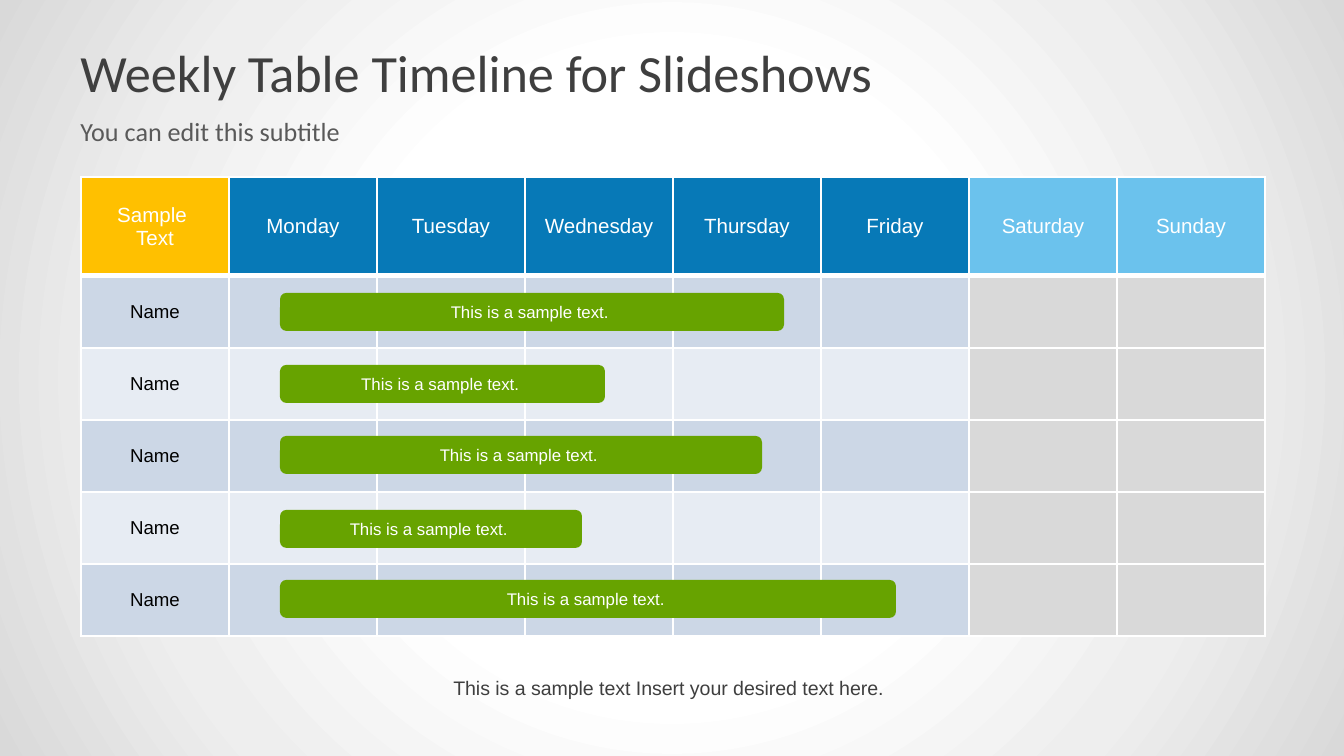
from pptx import Presentation
from pptx.dml.color import RGBColor
from pptx.enum.shapes import MSO_SHAPE
from pptx.enum.text import MSO_ANCHOR, PP_ALIGN
from pptx.oxml import parse_xml
from pptx.oxml.ns import nsdecls
from pptx.util import Emu, Pt

EMU_PER_PX = 914400 / 134.4

WHITE = RGBColor(0xFF, 0xFF, 0xFF)
BLACK = RGBColor(0x00, 0x00, 0x00)
DARK_GRAY = RGBColor(0x3F, 0x3F, 0x3F)
MID_GRAY = RGBColor(0x59, 0x59, 0x59)
PALE_GRAY = RGBColor(0xEE, 0xEE, 0xEE)
WEEKEND_GRAY = RGBColor(0xD9, 0xD9, 0xD9)
AMBER = RGBColor(0xFF, 0xC0, 0x00)
BLUE = RGBColor(0x07, 0x79, 0xB7)
SKY = RGBColor(0x6B, 0xC2, 0xED)
ROW_DARK = RGBColor(0xCC, 0xD7, 0xE6)
ROW_LIGHT = RGBColor(0xE7, 0xEC, 0xF3)
GREEN = RGBColor(0x67, 0xA3, 0x00)

HEADINGS = ["Sample \nText", "Monday", "Tuesday", "Wednesday", "Thursday",
            "Friday", "Saturday", "Sunday"]
HEADING_FILLS = [AMBER] + [BLUE] * 5 + [SKY] * 2
TASK_ROWS = 5
COLUMN_WIDTH, HEADING_HEIGHT, ROW_HEIGHT = 148, 99, 72
BAR_LEFT, BAR_HEIGHT = 280, 38
BARS = [(293, 504), (365, 325), (436, 482), (510, 302), (580, 616)]  # top, width


def px(*lengths):
    return [Emu(round(length * EMU_PER_PX)) for length in lengths]


class SlideBuilder:
    heading_font = "Calibri"
    body_font = "Arial"

    def __init__(self, page):
        self.page = page

    def background(self, stops):
        """Radial gradient from the centre; stops are (percent, colour)."""
        stop_xml = "".join(
            f'<a:gs pos="{percent * 1000}"><a:srgbClr val="{color}"/></a:gs>'
            for percent, color in stops)
        self.page.element.cSld.insert(0, parse_xml(
            f'<p:bg {nsdecls("p", "a")}><p:bgPr><a:gradFill rotWithShape="1">'
            f'<a:gsLst>{stop_xml}</a:gsLst><a:path path="circle">'
            '<a:fillToRect l="50000" t="50000" r="50000" b="50000"/></a:path>'
            '</a:gradFill><a:effectLst/></p:bgPr></p:bg>'))

    def set_text(self, frame, text, size, color, font=body_font, align=PP_ALIGN.CENTER):
        frame.text = text
        for para in frame.paragraphs:
            para.alignment = align
            for span in para.runs:
                span.font.size = Pt(size)
                span.font.name = font
                span.font.color.rgb = color

    def placeholder(self, index, text, area, size, color, anchor):
        box = self.page.placeholders[index]
        box.left, box.top, box.width, box.height = px(*area)
        frame = box.text_frame
        self.set_text(frame, text, size, color, self.heading_font, PP_ALIGN.LEFT)
        frame.vertical_anchor = anchor
        return frame

    def title(self, text, area):
        self.placeholder(0, text, area, 28, DARK_GRAY, MSO_ANCHOR.MIDDLE)

    def subtitle(self, text, area):
        frame = self.placeholder(1, text, area, 14, MID_GRAY, MSO_ANCHOR.TOP)
        para = frame.paragraphs[0]
        para.space_before = Pt(2.8)
        properties = para._p.get_or_add_pPr()
        properties.set("marL", "0")
        properties.set("indent", "0")
        properties.append(parse_xml(f'<a:buNone {nsdecls("a")}/>'))

    def caption(self, text, area):
        frame = self.page.shapes.add_textbox(*px(*area)).text_frame
        frame.word_wrap = True
        self.set_text(frame, text, 10.5, DARK_GRAY)

    def cell(self, cell, fill, top=1, bottom=1):
        """Fill a cell and give it white borders; widths are in points."""
        properties = cell._tc.get_or_add_tcPr()
        for side, width in zip("LRTB", (1, 1, top, bottom)):
            properties.append(parse_xml(
                f'<a:ln{side} {nsdecls("a")} w="{int(Pt(width))}"><a:solidFill>'
                f'<a:srgbClr val="{WHITE}"/></a:solidFill></a:ln{side}>'))
        cell.fill.solid()
        cell.fill.fore_color.rgb = fill
        cell.vertical_anchor = MSO_ANCHOR.MIDDLE

    def week_table(self, left, top):
        columns = len(HEADINGS)
        height = HEADING_HEIGHT + TASK_ROWS * ROW_HEIGHT
        table = self.page.shapes.add_table(
            TASK_ROWS + 1, columns,
            *px(left, top, columns * COLUMN_WIDTH, height)).table
        for column in table.columns:
            column.width, = px(COLUMN_WIDTH)
        for number, row in enumerate(table.rows):
            row.height, = px(ROW_HEIGHT if number else HEADING_HEIGHT)

        # Heading row
        for column, (heading, fill) in enumerate(zip(HEADINGS, HEADING_FILLS)):
            cell = table.cell(0, column)
            self.cell(cell, fill, bottom=3)
            self.set_text(cell.text_frame, heading, 11, WHITE)

        # Task rows: banded weekdays, plain weekend
        for row in range(1, TASK_ROWS + 1):
            band = ROW_DARK if row % 2 else ROW_LIGHT
            for column in range(columns):
                self.cell(table.cell(row, column),
                          WEEKEND_GRAY if column >= columns - 2 else band,
                          top=3 if row == 1 else 1)
            self.set_text(table.cell(row, 0).text_frame, "Name", 10, BLACK)

    def bar(self, text, area):
        box = self.page.shapes.add_shape(MSO_SHAPE.ROUNDED_RECTANGLE, *px(*area))
        box.shadow.inherit = False
        box.fill.solid()
        box.fill.fore_color.rgb = GREEN
        box.line.fill.background()
        box.text_frame.vertical_anchor = MSO_ANCHOR.MIDDLE
        self.set_text(box.text_frame, text, 9, WHITE)


def main():
    deck = Presentation()
    deck.slide_width, deck.slide_height = px(1344, 756)
    slide = SlideBuilder(deck.slides.add_slide(deck.slide_layouts[1]))

    # Backdrop and headings
    slide.background([(41, WHITE), (72, PALE_GRAY), (100, WEEKEND_GRAY)])
    slide.title("Weekly Table Timeline for Slideshows", (67, 32, 1210, 79))
    slide.subtitle("You can edit this subtitle", (67, 109, 1210, 56))
    slide.caption("This is a sample text Insert your desired text here. ",
                  (347, 669, 649, 38))

    # Week grid with one bar per task
    slide.week_table(81, 177)
    for top, width in BARS:
        slide.bar("This is a sample text. ", (BAR_LEFT, top, width, BAR_HEIGHT))

    deck.save("out.pptx")


if __name__ == "__main__":
    main()
